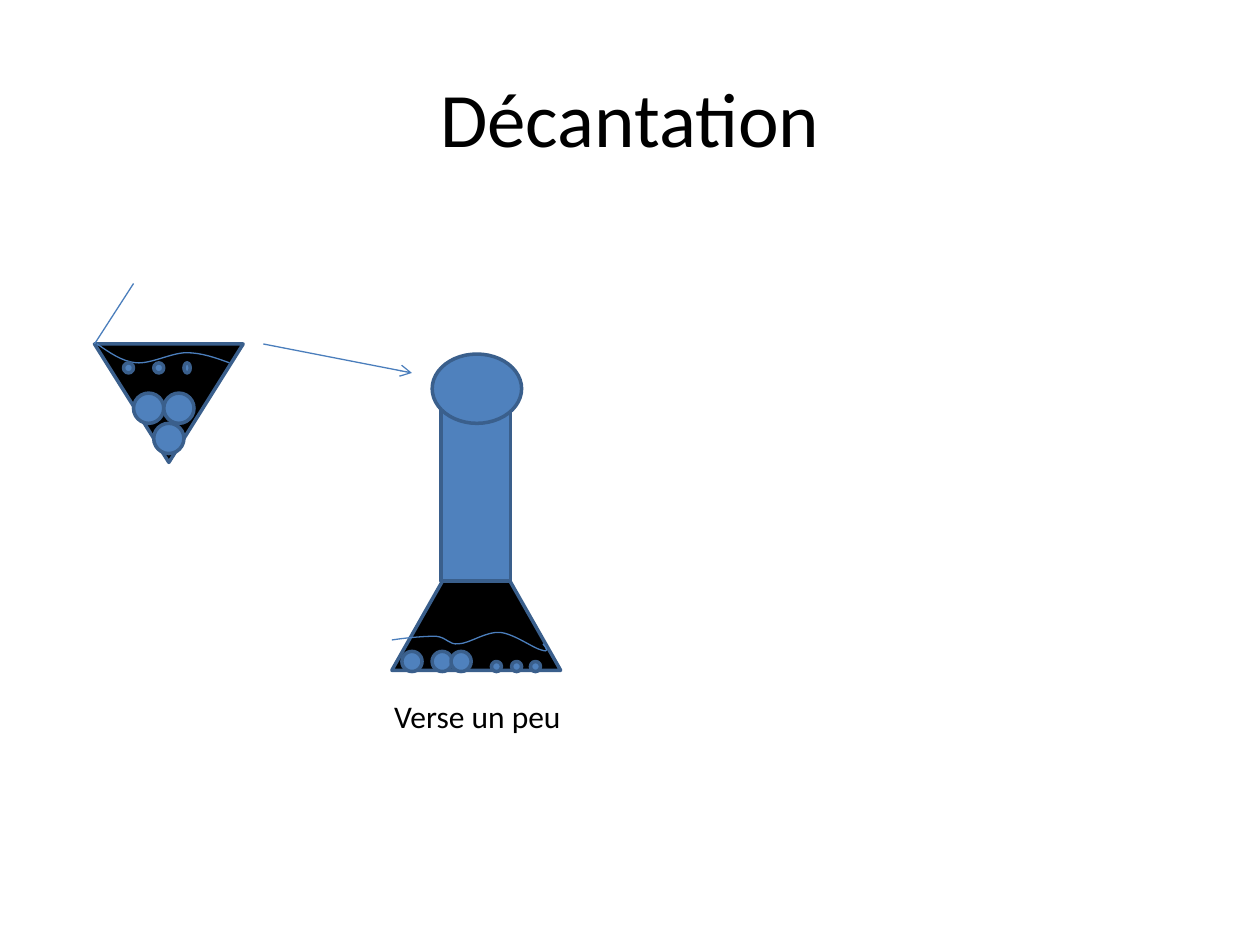
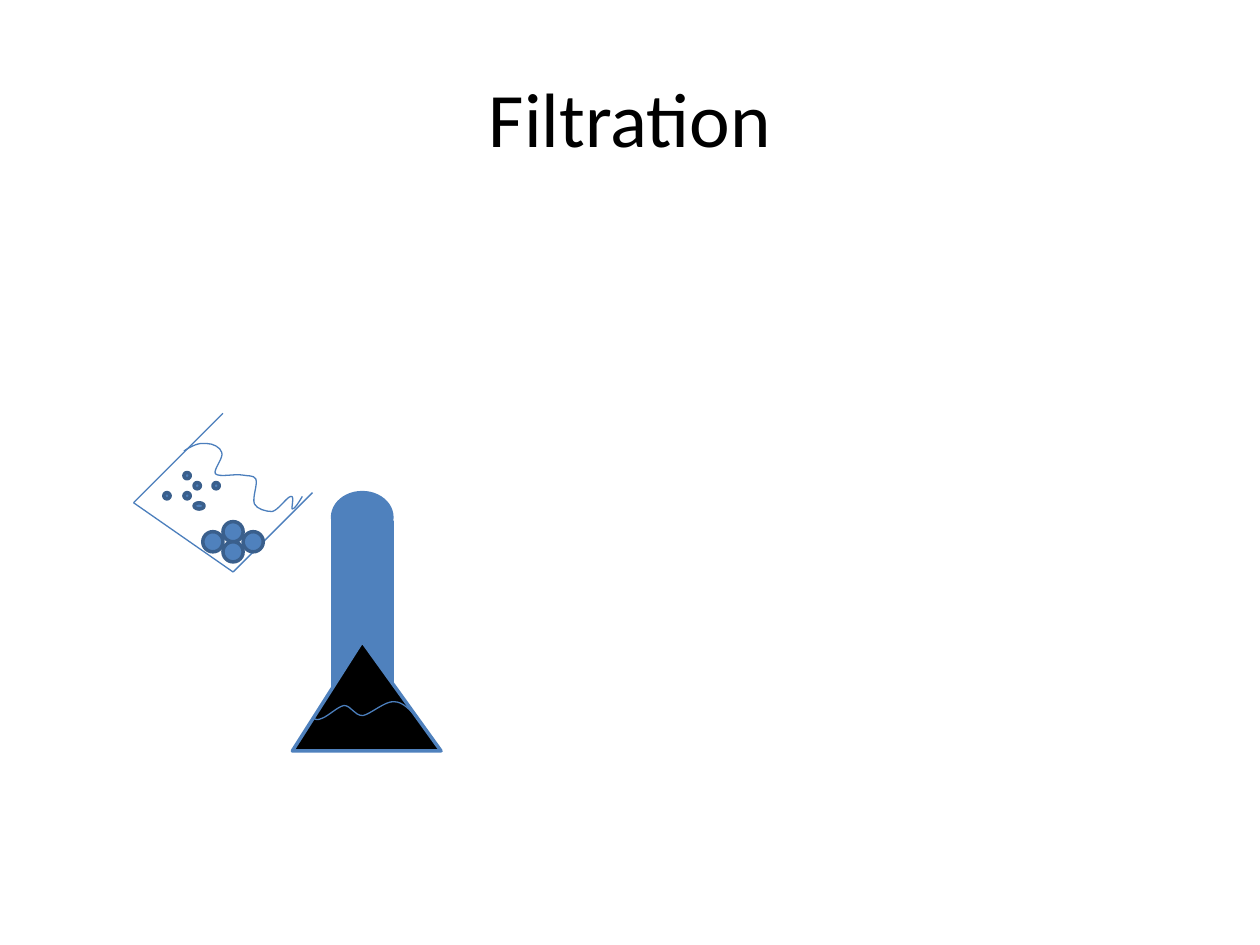
from pptx import Presentation
from pptx.dml.color import RGBColor
from pptx.enum import shapes, text
from pptx.oxml import ns, xmlchemy as xml
from pptx.util import Inches, Pt

BLACK = RGBColor(0x00, 0x00, 0x00)
BLUE = RGBColor(0x4F, 0x81, 0xBD)
EDGE = RGBColor(0x3A, 0x5F, 0x8C)
THIN = RGBColor(0x4B, 0x7E, 0xBC)
FONT = "Calibri"
KIND = shapes.MSO_SHAPE


def apply(item, values):
    for name, value in values.items():
        setattr(item, name, value)


def stroke(item, color, width):
    item.line.color.rgb = color
    item.line.width = Pt(width)


def label(slide, box, words, size, frame):
    item = slide.shapes.add_textbox(*map(Inches, box))
    apply(item.text_frame, {"word_wrap": True, **frame})
    para = item.text_frame.paragraphs[0]
    run = para.add_run()
    run.text = words
    apply(run.font, {"name": FONT, "size": Pt(size)})
    run.font.color.rgb = BLACK
    return para


def title(slide, words):
    frame = {"vertical_anchor": text.MSO_ANCHOR.MIDDLE}
    para = label(slide, (0.5, 0.3, 9, 1.25), words, 44, frame)
    para.alignment = text.PP_ALIGN.CENTER


def solid(slide, kind, box, fill=BLUE, edge=EDGE, turn=0):
    item = slide.shapes.add_shape(kind, *map(Inches, box))
    item.shadow.inherit = False
    item.fill.solid()
    item.fill.fore_color.rgb = fill
    stroke(item, edge, 2)
    item.rotation = turn
    return item


def grains(slide, left, top, spots, wide, high=None):
    for x, y in spots:
        box = (left + x, top + y, wide, high or wide)
        solid(slide, KIND.OVAL, box)


def line(slide, start, end, arrow=False):
    item = slide.shapes.add_connector(
        shapes.MSO_CONNECTOR.STRAIGHT, *map(Inches, (*start, *end)))
    stroke(item, THIN, 0.75)
    props = item._element.spPr
    if arrow:
        tail = xml.OxmlElement("a:tailEnd")
        tail.set("type", "arrow")
        props.find(ns.qn("a:ln")).append(tail)
    props.append(xml.OxmlElement("a:effectLst"))


def bend(item):
    legs = list(item._element.iter(ns.qn("a:lnTo")))
    for i in range(0, len(legs), 3):
        curve = xml.OxmlElement("a:cubicBezTo")
        legs[i].addprevious(curve)
        for leg in legs[i:i + 3]:
            curve.append(leg[0])
            leg.getparent().remove(leg)


def wave(slide, left, top, knots):
    dots = [(Inches(left + x), Inches(top + y)) for x, y in knots]
    build = slide.shapes.build_freeform(*dots[0])
    build.add_line_segments(dots[1:], close=False)
    item = build.convert_to_shape()
    bend(item)
    item.shadow.inherit = False
    item.fill.background()
    stroke(item, THIN, 0.75)


def flask(slide, left, top):
    solid(slide, KIND.ISOSCELES_TRIANGLE,
          (left, top + 1.33, 1.34, 1.18), BLACK)
    solid(slide, KIND.RECTANGLE,
          (left - 0.12, top + 0.74, 1.57, 0.55), turn=90)
    solid(slide, KIND.OVAL, (left + 0.32, top, 0.71, 0.55))


def settled(slide, left, top):
    wave(slide, left, top, [
        (0, 0.07), (0.13, 0.05), (0.26, 0.04), (0.35, 0.04),
        (0.44, 0.05), (0.45, 0.11), (0.53, 0.1),
        (0.61, 0.1), (0.75, 0), (0.86, 0.01),
        (0.97, 0.02), (1.13, 0.14), (1.19, 0.15),
        (1.25, 0.17), (1.23, 0.14), (1.2, 0.1)])
    grains(slide, left, top, [(x, 0.16) for x in (0.08, 0.32, 0.47)], 0.16)
    grains(slide, left, top, [(x, 0.24) for x in (0.79, 0.95, 1.1)], 0.08)


def funnel(slide, left, top):
    solid(slide, KIND.ISOSCELES_TRIANGLE,
          (left, top, 1.18, 0.94), BLACK, turn=180)
    line(slide, (left, top), (left + 0.31, top - 0.48))
    wave(slide, left, top, [
        (0.02, 0), (0.12, 0.07), (0.22, 0.14), (0.33, 0.15),
        (0.45, 0.16), (0.61, 0.07), (0.73, 0.07),
        (0.85, 0.07), (0.96, 0.11), (1.07, 0.15)])
    grains(slide, left, top, [(0.23, 0.15), (0.47, 0.15)], 0.08)
    grains(slide, left, top, [(0.71, 0.15)], 0.05, 0.08)
    grains(slide, left, top, [(0.31, 0.39), (0.55, 0.39), (0.47, 0.63)], 0.24)


def beaker(slide, left, top):
    ends = [(left + x, top + y)
            for x, y in ((0.71, 0), (0, 0.71), (0.79, 1.26), (1.42, 0.63))]
    for start, end in zip(ends, ends[1:]):
        line(slide, start, end)
    wave(slide, left + 0.4, top + 0.23, [
        (0, 0.07), (0.06, 0.03), (0.12, 0), (0.18, 0.01),
        (0.23, 0.01), (0.29, 0.04), (0.3, 0.08),
        (0.32, 0.12), (0.23, 0.22), (0.25, 0.25),
        (0.28, 0.28), (0.4, 0.25), (0.46, 0.26),
        (0.51, 0.27), (0.55, 0.26), (0.57, 0.29),
        (0.59, 0.33), (0.54, 0.44), (0.56, 0.49),
        (0.58, 0.53), (0.65, 0.55), (0.7, 0.55),
        (0.75, 0.54), (0.82, 0.43), (0.85, 0.43),
        (0.88, 0.42), (0.85, 0.53), (0.86, 0.53),
        (0.88, 0.53), (0.91, 0.48), (0.94, 0.43)])
    grains(slide, left, top, [(0.24, 0.63), (0.4, 0.47), (0.4, 0.63),
                              (0.48, 0.55), (0.63, 0.55)], 0.05)
    grains(slide, left, top, [(0.48, 0.71)], 0.08, 0.05)
    grains(slide, left, top, [(0.55, 0.94), (0.71, 0.86),
                              (0.71, 1.02), (0.87, 0.94)], 0.16)


def strainer(slide, left, top):
    solid(slide, KIND.OVAL, (left + 0.32, top, 0.47, 0.39), edge=BLUE)
    solid(slide, KIND.RECTANGLE,
          (left + 0.32, top + 0.23, 0.47, 1.34), edge=BLUE)
    base = solid(slide, KIND.ISOSCELES_TRIANGLE,
                 (left, top + 1.18, 1.18, 0.87), BLACK, BLUE)
    base.adjustments[0] = 0.47
    wave(slide, left + 0.16, top + 1.65, [
        (0, 0.14), (0.02, 0.15), (0.04, 0.16), (0.08, 0.14),
        (0.13, 0.12), (0.2, 0.05), (0.25, 0.04),
        (0.31, 0.04), (0.33, 0.12), (0.4, 0.12),
        (0.46, 0.11), (0.58, 0), (0.65, 0.01),
        (0.72, 0.01), (0.78, 0.08), (0.84, 0.15)])


def settle(slide):
    title(slide, "Décantation")
    flask(slide, 3.11, 2.81)
    funnel(slide, 0.75, 2.73)
    line(slide, (2.09, 2.73), (3.27, 2.96), arrow=True)
    settled(slide, 3.11, 5.01)
    label(slide, (3.03, 5.48, 3.31, 0.4), "Verse un peu", 18,
          {"auto_size": text.MSO_AUTO_SIZE.SHAPE_TO_FIT_TEXT})


def strain(slide):
    title(slide, "Filtration")
    beaker(slide, 1.06, 3.28)
    strainer(slide, 2.32, 3.91)


def main():
    deck = Presentation()
    apply(deck, {"slide_width": Inches(10), "slide_height": Inches(7.5)})
    for draw in (settle, strain):
        draw(deck.slides.add_slide(deck.slide_layouts[6]))
    deck.save("out.pptx")


if __name__ == "__main__":
    main()
